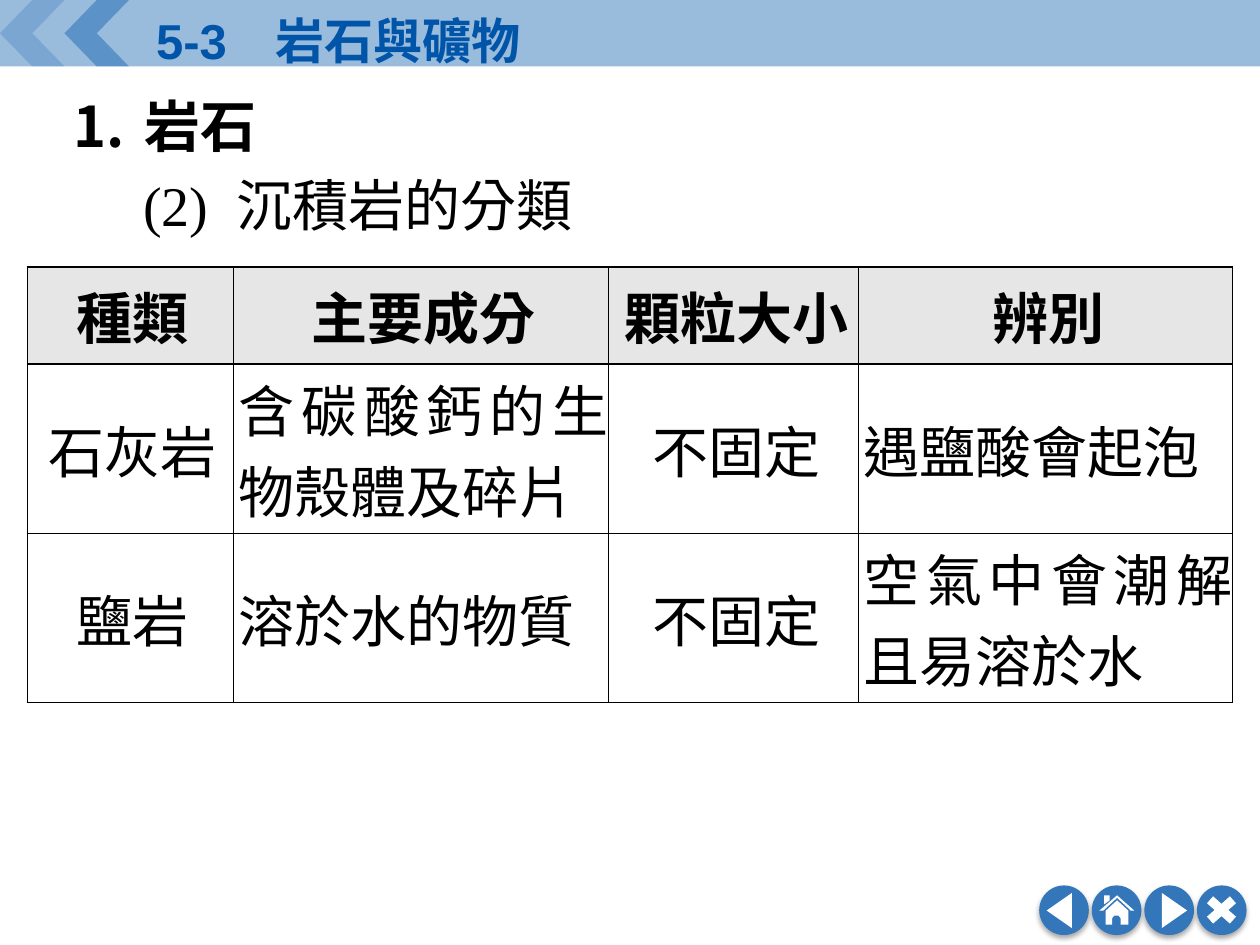
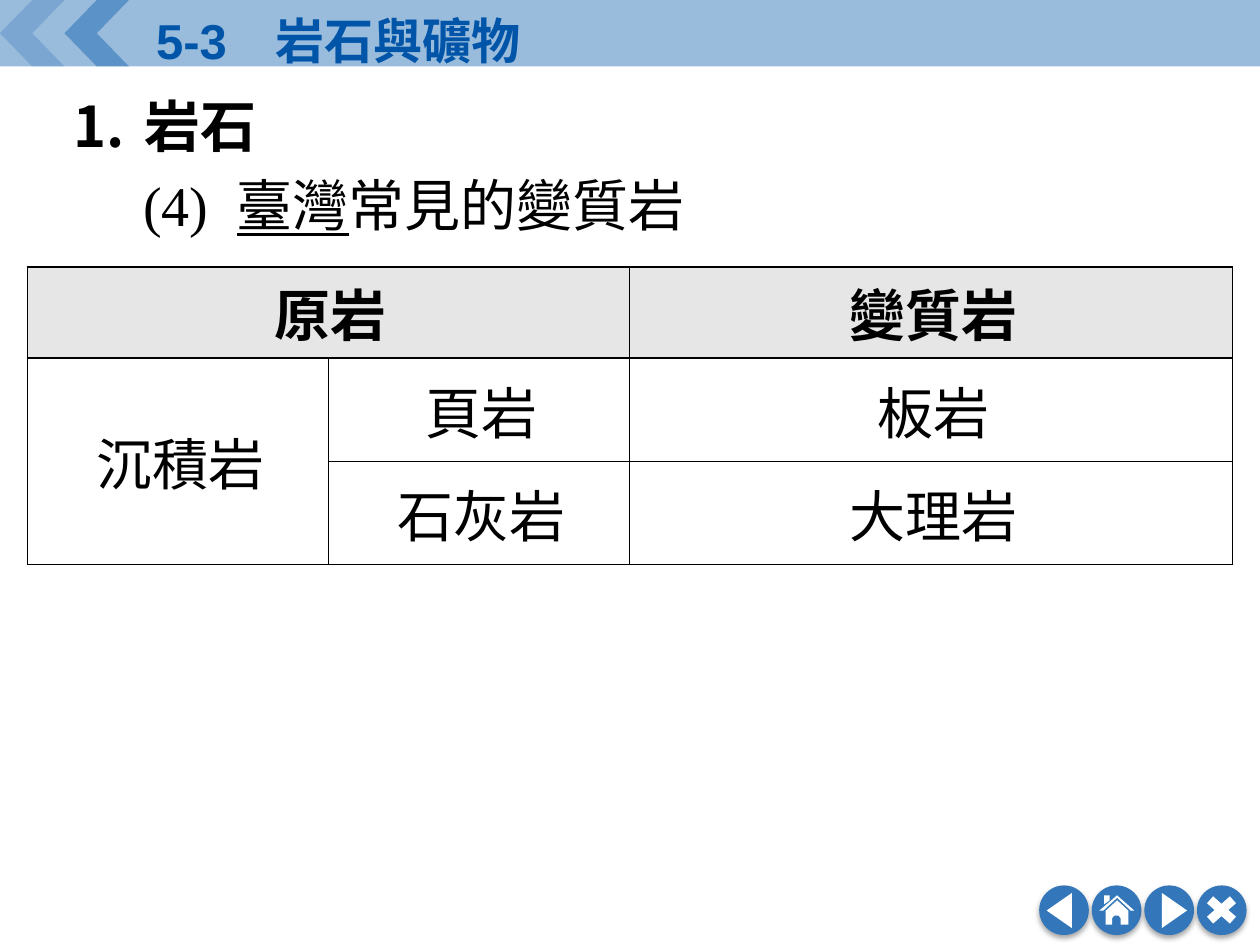
from lxml import etree
from pptx import Presentation
from pptx import util as u
from pptx.dml.color import RGBColor
from pptx.enum import lang, shapes, text
from pptx.oxml import ns

Cm, Pt = u.Cm, u.Pt
KIND = shapes.MSO_SHAPE
MID, LEFT, JUST = text.PP_ALIGN.CENTER, text.PP_ALIGN.LEFT, text.PP_ALIGN.JUSTIFY

# Content
TITLE = "5-3　岩石與礦物"
HEAD = "岩石"
PAGES = [
    {
        "topic": ("(2)", [("沉積岩的分類", False)]),
        "rows": [
            ["種類", "主要成分", "顆粒大小", "辨別"],
            ["石灰岩", "含碳酸鈣的生物殼體及碎片", "不固定", "遇鹽酸會起泡"],
            ["鹽岩", "溶於水的物質", "不固定", "空氣中會潮解且易溶於水"],
        ],
        "wide": [4.16, 7.56, 5.04, 7.54],
        "high": [1.96, 3.41, 3.41],
        "pads": [0.1, 0, 0, 0],
        "just": [1, 3],
        "merge": [],
    },
    {
        "topic": ("(4)", [("臺灣", True), ("常見的變質岩", False)]),
        "rows": [
            ["原岩", "", "變質岩"],
            ["沉積岩", "頁岩", "板岩"],
            ["", "石灰岩", "大理岩"],
        ],
        "wide": [6.07, 6.07, 12.16],
        "high": [1.84, 2.08, 2.08],
        "pads": [0.1, 0.1, 0],
        "just": [],
        "merge": [((0, 0), (0, 1)), ((1, 0), (2, 0))],
    },
]

# Style
HUE = {"navy": "0055A9", "disc": "3377BA", "white": "FFFFFF",
       "black": "000000", "grey": "E6E6E6"}
BAND = 1.34
CHEV = 1.3
DISC = {"x": 20.95, "y": 17.85, "size": 1.0, "step": 1.06}

# House icon, in hundredths of a centimetre from the disc corner
HOUSE = [
    [(51, 30), (74, 51), (74, 79), (58, 79), (58, 66), (54, 61),
     (45, 61), (41, 66), (41, 79), (28, 79), (28, 51)],
    [(25, 20), (36, 20), (36, 30), (25, 38)],
    [(51, 20), (86, 51), (79, 51), (51, 25)],
    [(51, 20), (51, 25), (23, 51), (15, 51)],
]
# Icon shape, offset, size and turn; None stands for the house
ICONS = [
    (KIND.ISOSCELES_TRIANGLE, (0.05, 0.25), (0.71, 0.51), 270),
    None,
    (KIND.ISOSCELES_TRIANGLE, (0.25, 0.25), (0.71, 0.51), 90),
    (KIND.MATH_MULTIPLY, (0.05, 0.1), (0.89, 0.79), 0),
]


def sub(node, tag, **attrs):
    return etree.SubElement(node, ns.qn(tag), attrs)


def paint(shp, hue, alpha=None):
    shp.shadow.inherit = False
    shp.fill.solid()
    shp.fill.fore_color.rgb = RGBColor.from_string(HUE[hue])
    shp.line.fill.background()
    if alpha:
        clr = shp._element.spPr.find(".//" + ns.qn("a:srgbClr"))
        sub(clr, "a:alpha", val=str(alpha * 1000))


def draw(sld, kind, x, y, w, h, hue, alpha=None, turn=0):
    shp = sld.shapes.add_shape(kind, Cm(x), Cm(y), Cm(w), Cm(h))
    shp.rotation = turn
    paint(shp, hue, alpha)
    return shp


def write(para, words, size=32, face="Times New Roman", hue="black",
          bold=False, under=False):
    run = para.add_run()
    run.text = words
    font = run.font
    font.size, font.name, font.bold = Pt(size), face, bold
    font.color.rgb = RGBColor.from_string(HUE[hue])
    font.language_id = lang.MSO_LANGUAGE_ID.TRADITIONAL_CHINESE
    if under:
        font.underline = True
    return run


def indent(para, left, first=0):
    props = para._p.get_or_add_pPr()
    props.set("marL", str(Cm(left)))
    props.set("indent", str(Cm(first)))
    return props


def box(sld, x, y, w, h):
    shp = sld.shapes.add_textbox(Cm(x), Cm(y), Cm(w), Cm(h))
    shp.text_frame.word_wrap = True
    return shp.text_frame


def shade(shp):
    fx = shp._element.spPr.find(ns.qn("a:effectLst"))
    drop = sub(fx, "a:outerShdw", blurRad=str(Pt(3.1)), dist=str(Pt(1.8)),
               dir="5400000", algn="t", rotWithShape="0")
    clr = sub(drop, "a:srgbClr", val=HUE["black"])
    sub(clr, "a:alpha", val="35000")


def house(sld, x, y):
    pen = sld.shapes.build_freeform(*HOUSE[0][0], scale=Cm(1) / 100)
    for num, part in enumerate(HOUSE):
        if num:
            pen.move_to(*part[0])
        pen.add_line_segments(part[1:], close=True)
    paint(pen.convert_to_shape(Cm(x), Cm(y)), "white")


def frame(sld):
    # Top band with chevrons and title
    draw(sld, KIND.RECTANGLE, 0, 0, 25.4, BAND, "navy", 40)
    for num, alpha in enumerate((20, 40)):
        draw(sld, KIND.CHEVRON, num * CHEV, 0, CHEV, BAND, "navy", alpha, 180)
    body = box(sld, 2.9, 0.08, 11, 1.45)
    write(body.paragraphs[0], TITLE, 28, "Arial", "navy", True)

    # Round buttons
    y, size = DISC["y"], DISC["size"]
    for num, icon in enumerate(ICONS):
        x = DISC["x"] + num * DISC["step"]
        shade(draw(sld, KIND.OVAL, x, y, size, size, "disc"))
        if icon is None:
            house(sld, x, y)
        else:
            kind, (dx, dy), (w, h), turn = icon
            draw(sld, kind, x + dx, y + dy, w, h, "white", turn=turn)


def lead(sld, topic):
    body = box(sld, 1.24, 1.73, 22.7, 1.63)
    top = body.paragraphs[0]
    top.alignment, top.space_before = JUST, Pt(2.5)
    sub(indent(top, 1.42, -1.42), "a:buAutoNum", type="arabicPeriod")
    write(top, HEAD, bold=True)

    mark, parts = topic
    line = body.add_paragraph()
    line.alignment, line.space_before = JUST, Pt(6.4)
    indent(line, 3.05, -1.65)
    write(line, mark)
    gap = write(line, " ")
    gap.font._element.set("spc", "800")
    for words, under in parts:
        write(line, words, under=under)


def edge(cell):
    props = cell._tc.get_or_add_tcPr()
    for side in "LRTB":
        line = sub(props, "a:ln" + side, w=str(Pt(1)))
        sub(sub(line, "a:solidFill"), "a:srgbClr", val=HUE["black"])


def grid(sld, page):
    rows, wide, high = page["rows"], page["wide"], page["high"]
    tab = sld.shapes.add_table(len(rows), len(wide), Cm(0.55), Cm(5.38),
                               Cm(sum(wide)), Cm(sum(high))).table
    tab.first_row = tab.horz_banding = False
    for col, w in zip(tab.columns, wide):
        col.width = Cm(w)
    for row, h in zip(tab.rows, high):
        row.height = Cm(h)
    for start, end in page["merge"]:
        tab.cell(*start).merge(tab.cell(*end))

    for r, row in enumerate(rows):
        for c, words in enumerate(row):
            cell, top = tab.cell(r, c), r == 0
            edge(cell)
            if top:
                cell.fill.solid()
                cell.fill.fore_color.rgb = RGBColor.from_string(HUE["grey"])
            else:
                cell.fill.background()
            pad = Cm(0.1 if top else page["pads"][c])
            cell.margin_left = cell.margin_right = pad
            cell.margin_top = cell.margin_bottom = pad
            cell.vertical_anchor = text.MSO_ANCHOR.MIDDLE
            if words:
                para = cell.text_frame.paragraphs[0]
                para.alignment = JUST if c in page["just"] and not top else MID
                indent(para, 0.1)
                write(para, words, bold=top)


def main():
    deck = Presentation()
    deck.slide_width, deck.slide_height = Cm(25.4), Cm(19.05)
    for page in PAGES:
        sld = deck.slides.add_slide(deck.slide_layouts[6])
        frame(sld)
        lead(sld, page["topic"])
        grid(sld, page)
    deck.save("out.pptx")


if __name__ == "__main__":
    main()
